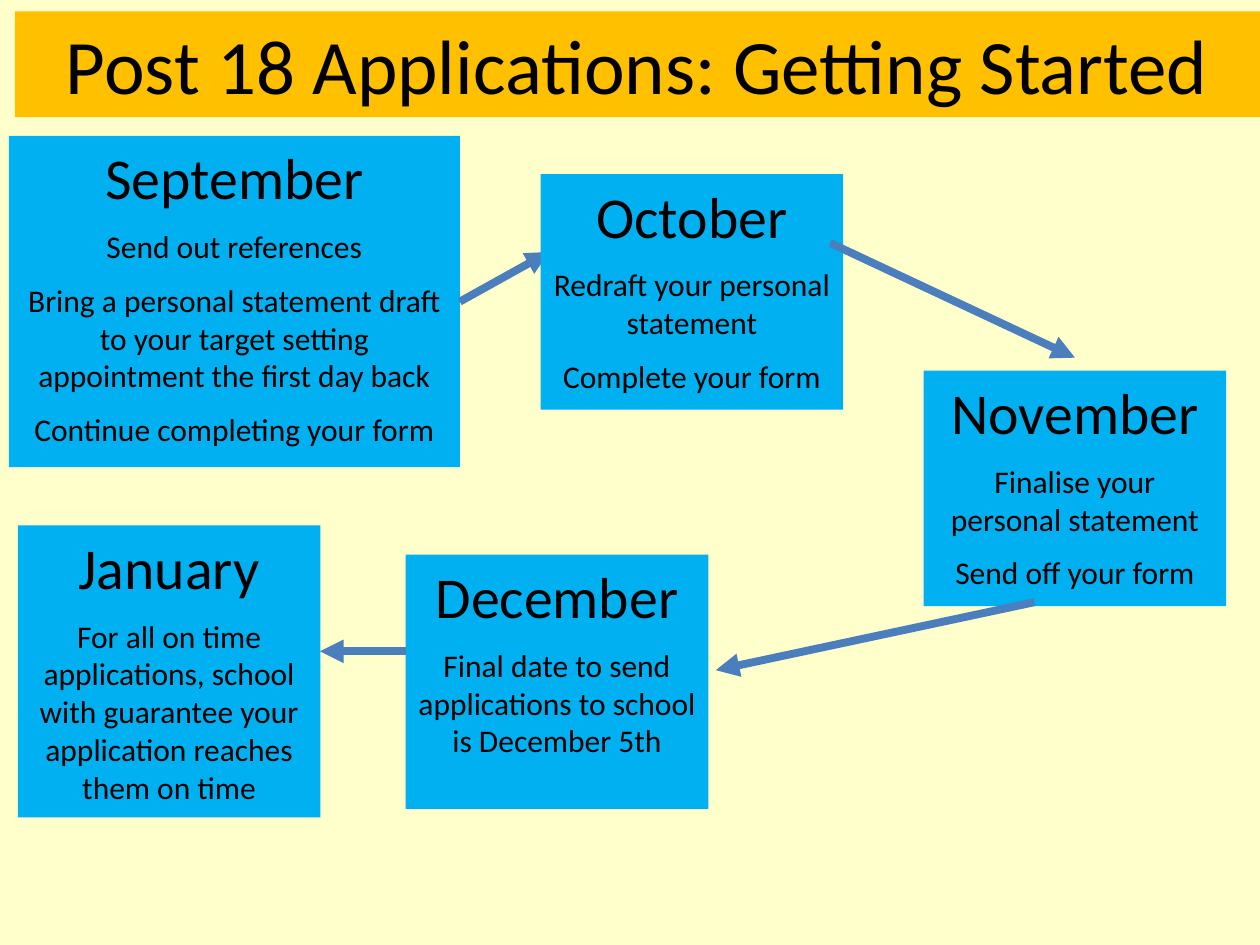
from dataclasses import dataclass

from lxml.etree import SubElement
from pptx import Presentation
from pptx.dml.color import RGBColor
from pptx.enum.shapes import MSO_CONNECTOR, MSO_SHAPE
from pptx.enum.text import MSO_ANCHOR, MSO_AUTO_SIZE, PP_ALIGN
from pptx.oxml.ns import qn
from pptx.shapes.autoshape import Shape
from pptx.shapes.connector import Connector
from pptx.slide import Slide
from pptx.text.text import TextFrame
from pptx.util import Cm, Pt

CREAM = RGBColor(0xFF, 0xFF, 0xCC)
GOLD = RGBColor(0xFF, 0xC0, 0x00)
SKY = RGBColor(0x00, 0xB0, 0xF0)
STEEL = RGBColor(0x4B, 0x7E, 0xBC)
BLACK = RGBColor(0x00, 0x00, 0x00)
FONT = "Calibri"
RIGHT = 3


@dataclass
class Month:
    name: str
    tasks: list[str]
    left: float
    top: float
    height: float
    width: float = 6.1


@dataclass
class Arrow:
    start: tuple[float, float]
    end: tuple[float, float]


FIRST = Month("September", [
    "Send out references",
    "Bring a personal statement draft to your target setting appointment the first day back",
    "Continue completing your form",
], 0.18, 2.74, 6.68, 9.09)
LATER = [
    Month("October", ["Redraft your personal statement", "Complete your form"],
          10.9, 3.51, 4.75),
    Month("November", ["Finalise your personal statement", "Send off your form"],
          18.62, 7.47, 4.75),
    Month("December", ["Final date to send applications to school is December 5th"],
          8.18, 11.18, 5.13),
    Month("January", ["For all on time applications, school with guarantee "
                      "your application reaches them on time"],
          0.36, 10.59, 5.89),
]
LEAD = Arrow((9.27, 6.08), (11.07, 5.08))
ARROWS = [
    Arrow((16.74, 4.9), (21.67, 7.21)),
    Arrow((20.85, 12.14), (14.43, 13.51)),
    Arrow((8.18, 13.13), (6.45, 13.13)),
]


def write(frame: TextFrame, lines: list[tuple[str, int]]) -> None:
    """Fill the frame with centred lines, each given as text and point size."""
    frame.word_wrap = True
    frame.auto_size = MSO_AUTO_SIZE.NONE
    for i, (text, size) in enumerate(lines):
        para = frame.add_paragraph() if i else frame.paragraphs[0]
        para.alignment = PP_ALIGN.CENTER
        para.space_before = Pt(size / 2 if i else 0)
        run = para.add_run()
        run.text = text
        run.font.name = FONT
        run.font.size = Pt(size)
        run.font.color.rgb = BLACK


def add_title(slide: Slide, text: str) -> None:
    title = slide.shapes.title
    title.left, title.top = Cm(0.3), Cm(0.23)
    title.width, title.height = Cm(25.1), Cm(2.13)
    title.fill.solid()
    title.fill.fore_color.rgb = GOLD
    write(title.text_frame, [(text, 44)])
    title.text_frame.vertical_anchor = MSO_ANCHOR.TOP


def add_month(slide: Slide, month: Month) -> Shape:
    box = slide.shapes.add_shape(
        MSO_SHAPE.RECTANGLE, Cm(month.left), Cm(month.top),
        Cm(month.width), Cm(month.height))
    box.shadow.inherit = False
    box.fill.solid()
    box.fill.fore_color.rgb = SKY
    box.line.fill.background()
    write(box.text_frame, [(month.name, 33)] + [(task, 18) for task in month.tasks])
    box.text_frame.vertical_anchor = MSO_ANCHOR.TOP
    return box


def add_arrow(slide: Slide, arrow: Arrow) -> Connector:
    link = slide.shapes.add_connector(
        MSO_CONNECTOR.STRAIGHT, *map(Cm, arrow.start + arrow.end))
    link.line.color.rgb = STEEL
    link.line.width = Pt(4.5)
    props = link.line._get_or_add_ln()
    SubElement(props, qn("a:tailEnd"), type="triangle")
    SubElement(link._element.spPr, qn("a:effectLst"))
    return link


def main() -> None:
    deck = Presentation()
    deck.slide_width, deck.slide_height = Cm(25.4), Cm(19.05)
    slide = deck.slides.add_slide(deck.slide_layouts[5])
    slide.background.fill.solid()
    slide.background.fill.fore_color.rgb = CREAM

    add_title(slide, "Post 18 Applications: Getting Started")
    first = add_month(slide, FIRST)
    # The lead arrow's head is tucked under the October box
    add_arrow(slide, LEAD).begin_connect(first, RIGHT)
    for month in LATER:
        add_month(slide, month)
    for arrow in ARROWS:
        add_arrow(slide, arrow)
    deck.save("out.pptx")


if __name__ == "__main__":
    main()
